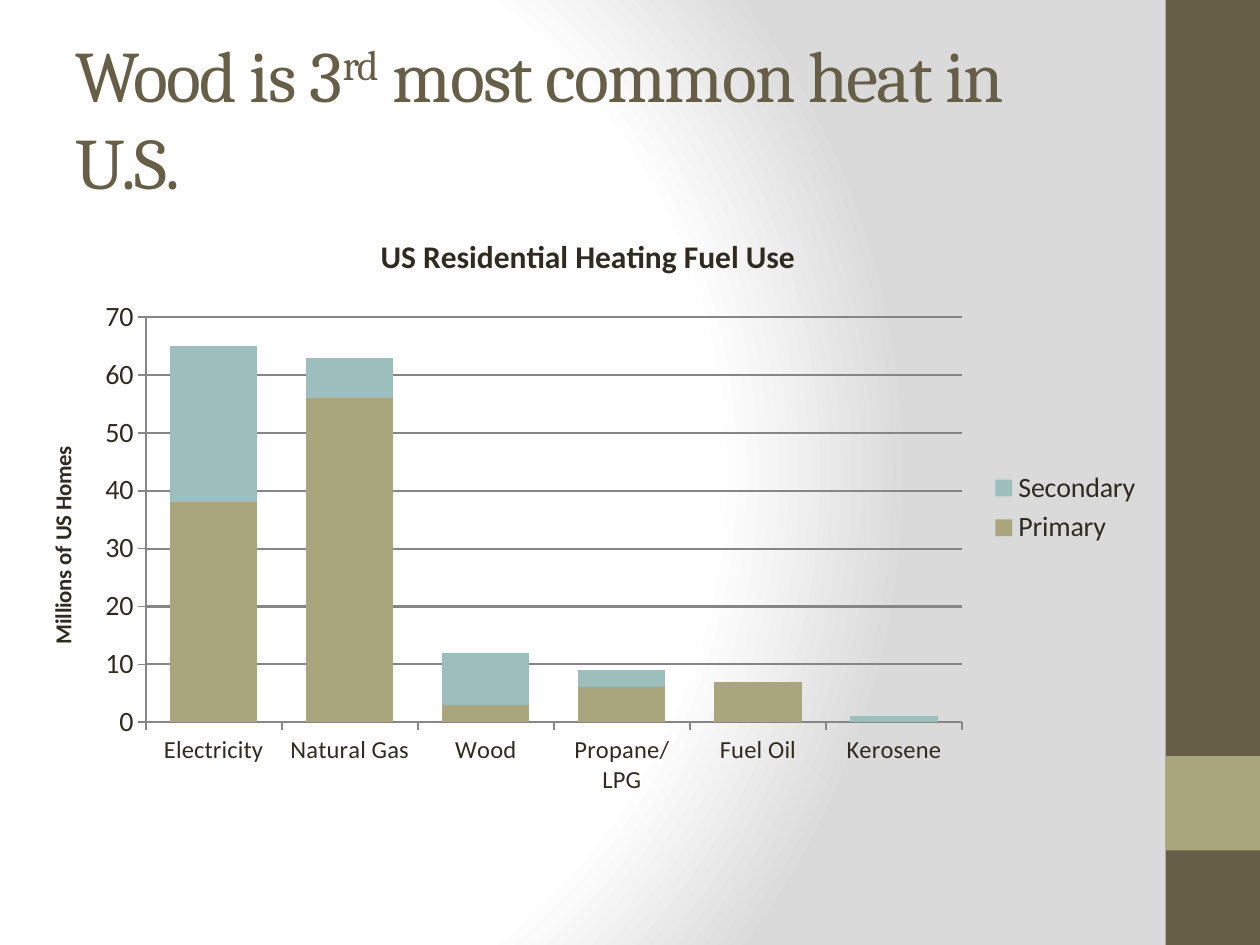
from lxml.etree import SubElement
from pptx import Presentation
from pptx.chart.data import CategoryChartData
from pptx.dml.color import RGBColor
from pptx.enum.chart import (XL_CHART_TYPE as ChartType, XL_LEGEND_POSITION as LegendPos,
                             XL_TICK_MARK as Tick)
from pptx.enum.shapes import MSO_SHAPE as Shape
from pptx.enum.text import MSO_ANCHOR as Anchor
from pptx.oxml import parse_xml
from pptx.oxml.ns import nsdecls, qn
from pptx.util import Pt

BROWN = RGBColor(0x67, 0x5E, 0x47)
OLIVE = RGBColor(0xA9, 0xA5, 0x7C)
TEAL = RGBColor(0x9C, 0xBE, 0xBD)
INK = RGBColor(0x2F, 0x2B, 0x20)
GRID = RGBColor(0x86, 0x86, 0x86)
WHITE = RGBColor(0xFF, 0xFF, 0xFF)
GREY = RGBColor(0xDA, 0xDA, 0xDA)

FUELS = ["Electricity", "Natural Gas", "Wood", "Propane/LPG", "Fuel Oil", "Kerosene"]
SERIES = [
    ("Primary", OLIVE, [38, 56, 3, 6, 7, 0]),
    ("Secondary", TEAL, [27, 7, 9, 3, 0, 1]),
]


def set_background(s):
    s.background.fill.solid()
    bg = s.element.find(".//" + qn("p:bgPr"))
    stops = "".join(
        f'<a:gs pos="{pos * 1000}"><a:srgbClr val="{color}"/></a:gs>'
        for pos, color in ((0, WHITE), (75, WHITE), (100, GREY)))
    bg.replace(bg[0], parse_xml(
        f'<a:gradFill {nsdecls("a")} rotWithShape="1"><a:gsLst>{stops}</a:gsLst>'
        '<a:path path="circle"><a:fillToRect l="20000" t="50000" r="100000" b="50000"/>'
        '</a:path></a:gradFill>'))


def add_block(s, x, y, w, h, color):
    sp = s.shapes.add_shape(Shape.RECTANGLE, Pt(x), Pt(y), Pt(w), Pt(h))
    sp.shadow.inherit = False
    sp.fill.solid()
    sp.fill.fore_color.rgb = color
    sp.line.fill.background()


def style_font(font, size, color=INK, name="Calibri", bold=False):
    font.size, font.name, font.bold = Pt(size), name, bold
    font.color.rgb = color


def add_title(s, runs):
    sp = s.shapes.add_textbox(Pt(36), Pt(21.6), Pt(600), Pt(90))
    tf = sp.text_frame
    tf.word_wrap = True
    tf.vertical_anchor = Anchor.MIDDLE
    p = tf.paragraphs[0]
    for text, baseline in runs:
        r = p.add_run()
        r.text = text
        style_font(r.font, 41.4, BROWN, "Cambria")
        props = r.font._element
        props.set("spc", "-100")
        if baseline:
            props.set("baseline", str(baseline * 1000))


def set_layout(parent, index, **values):
    """Place a chart part by fractions of the chart area."""
    for old in parent.findall(qn("c:layout")):
        parent.remove(old)
    layout = parse_xml(f'<c:layout {nsdecls("c")}/>')
    manual = SubElement(layout, qn("c:manualLayout"))
    for tag, value in values.items():
        SubElement(manual, qn("c:" + tag)).set("val", str(value))
    parent.insert(index, layout)


def write_heading(owner, text, size):
    r = owner.text_frame.paragraphs[0].add_run()
    r.text = text
    style_font(r.font, size, bold=True)


def style_axis(axis, size):
    axis.major_tick_mark = Tick.OUTSIDE
    axis.minor_tick_mark = Tick.NONE
    style_font(axis.tick_labels.font, size)
    axis.format.line.color.rgb = GRID
    axis.format.line.width = Pt(1)


def add_fuel_chart(s):
    data = CategoryChartData(number_format="0")
    data.categories = FUELS
    for name, _, values in SERIES:
        data.add_series(name, values)
    chart = s.shapes.add_chart(ChartType.COLUMN_STACKED, Pt(12), Pt(120),
                               Pt(648), Pt(340.5), data).chart
    style_font(chart.font, 10)
    chart.has_title = True
    write_heading(chart.chart_title, "US Residential Heating Fuel Use", 18)

    # Columns
    plot = chart.plots[0]
    plot.gap_width, plot.overlap, plot.vary_by_categories = 56, 100, False
    for series, (_, color, _) in zip(plot.series, SERIES):
        series.format.fill.solid()
        series.format.fill.fore_color.rgb = color

    # Axes
    style_axis(chart.category_axis, 14)
    axis = chart.value_axis
    style_axis(axis, 16)
    axis.minimum_scale, axis.maximum_scale, axis.major_unit = 0, 70, 10
    axis.tick_labels.number_format = "0"
    axis.tick_labels.number_format_is_linked = False
    axis.has_major_gridlines = True
    axis.major_gridlines.format.line.color.rgb = GRID
    axis.major_gridlines.format.line.width = Pt(1.15)
    axis.has_title = True
    write_heading(axis.axis_title, "Millions of US Homes", 13)
    axis.axis_title.text_frame._txBody.bodyPr.set("rot", "-5400000")
    set_layout(axis.axis_title._element, 1, xMode="edge", yMode="edge", x=0.02, y=0.39)

    # Legend and plot area
    chart.has_legend = True
    chart.legend.position = LegendPos.RIGHT
    chart.legend.include_in_layout = False
    style_font(chart.legend.font, 16)
    set_layout(chart.element.find(".//" + qn("c:plotArea")), 0, layoutTarget="inner",
               xMode="edge", yMode="edge", x=0.11, y=0.18, w=0.72, h=0.68)


def main():
    prs = Presentation()
    prs.slide_width, prs.slide_height = Pt(720), Pt(540)
    s = prs.slides.add_slide(prs.slide_layouts[6])
    set_background(s)
    # Side band with its accent square
    add_block(s, 666, 0, 54, 540, BROWN)
    add_block(s, 666, 432, 54, 54, OLIVE)
    add_title(s, [("Wood is 3", 0), ("rd", 30), (" most common heat in U.S.", 0)])
    add_fuel_chart(s)
    prs.save("out.pptx")


if __name__ == "__main__":
    main()
